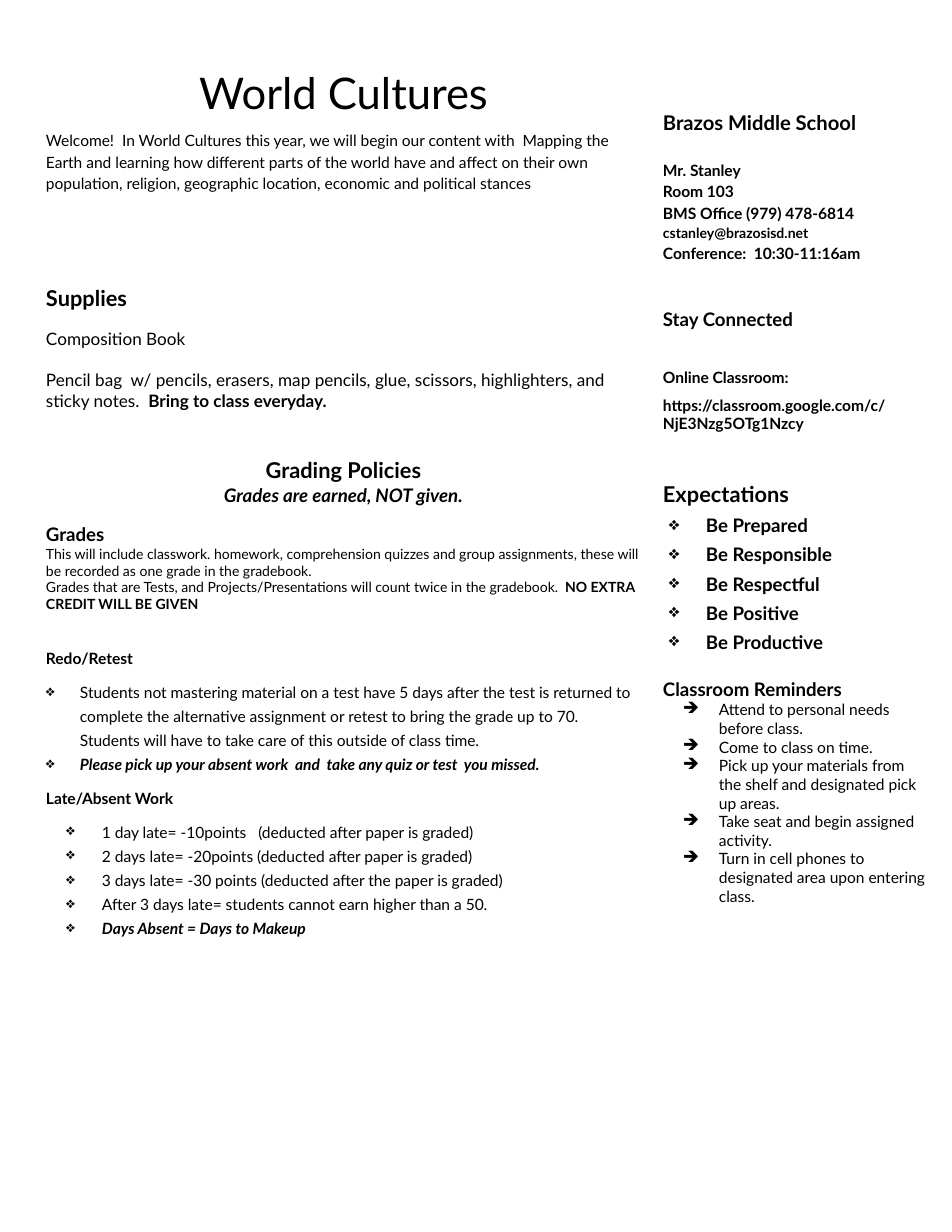
import pptx
import pptx.dml.color
import pptx.enum.text
import pptx.util
import lxml.etree

SCALE = 914400 / 112
THEME = {
    "font": "Lato",
    "ink": pptx.dml.color.RGBColor(0, 0, 0),
    "paper": pptx.dml.color.RGBColor(255, 255, 255),
    "display": 28, "section": 14, "school": 13, "heading": 12,
    "supply": 11, "body": 10, "small": 9,
}
CENTER = pptx.enum.text.PP_ALIGN.CENTER
BOLD = {"bold": True}
BOLD_ITALIC = {"bold": True, "italic": True}
# Bullet character, left indent and hanging indent in px
REDO_LIST = ("❖", 34, -36)
LATE_LIST = ("❖", 56, -36)
EXPECTATION_LIST = ("❖", 43, -37)
REMINDER_LIST = ("➔", 56, -36)


def px(length):
    return pptx.util.Emu(round(length * SCALE))


def fill_cell(cell, top, paragraphs):
    """Write (runs, size, paragraph format, bullet) rows; runs are (text, font format) pairs."""
    cell.margin_left = cell.margin_right = cell.margin_bottom = px(11)
    cell.margin_top = px(top)
    frame = cell.text_frame
    for index, (runs, size, layout, bullet) in enumerate(paragraphs):
        paragraph = frame.add_paragraph() if index else frame.paragraphs[0]
        for name, value in layout.items():
            if name == "first_line":
                paragraph._p.get_or_add_pPr().set("indent", str(px(value)))
            else:
                setattr(paragraph, name, value)
        if bullet:
            character, left, hanging = bullet
            properties = paragraph._p.get_or_add_pPr()
            properties.set("marL", str(px(left)))
            properties.set("indent", str(px(hanging)))
            namespace = "{%s}" % properties.nsmap["a"]
            color = lxml.etree.SubElement(properties, namespace + "buClr")
            lxml.etree.SubElement(color, namespace + "srgbClr", val=str(THEME["ink"]))
            lxml.etree.SubElement(properties, namespace + "buChar", char=character)
        for text, emphasis in runs:
            run = paragraph.add_run()
            run.text = text
            run.font.color.rgb = THEME["ink"]
            font = {"name": THEME["font"], "size": pptx.util.Pt(THEME[size]), **emphasis}
            for name, value in font.items():
                setattr(run.font, name, value)


presentation = pptx.Presentation()
presentation.slide_width = px(952)
presentation.slide_height = px(1232)
slide = presentation.slides.add_slide(presentation.slide_layouts[6])

table = slide.shapes.add_table(3, 2, px(35), px(12), px(901), px(1220)).table
table.first_row = table.horz_banding = False
for column, width in zip(table.columns, (617, 284)):
    column.width = px(width)
for row, height in zip(table.rows, (259, 783, 178)):
    row.height = px(height)
for cell in table.iter_cells():
    cell.fill.solid()
    cell.fill.fore_color.rgb = THEME["paper"]

before = {points: {"space_before": pptx.util.Pt(points)} for points in (6, 11, 13, 15, 16, 20, 24, 26, 30)}
airy = {"line_spacing": 1.15}
loose = {"line_spacing": 1.3}

fill_cell(table.cell(0, 0), 55, [
    ([("World Cultures", {})], "display", {"alignment": CENTER}, None),
    ([("Welcome!  In World Cultures this year, we will begin our content with  Mapping the Earth "
       "and learning how different parts of the world have and affect on their own population, "
       "religion, geographic location, economic and political stances", {})],
     "body", {**airy, **before[6]}, None),
])

contact = [
    ("Brazos Middle School", "school", {}),
    ("Mr. Stanley", "body", before[15]),
    ("Room 103", "body", {}),
    ("BMS Office (979) 478-6814", "body", {}),
    ("cstanley@brazosisd.net", "small", {}),
    ("Conference:  10:30-11:16am", "body", {}),
]
fill_cell(table.cell(0, 1), 95, [
    ([(text, BOLD)], size, {**airy, **gap}, None) for text, size, gap in contact
])

policies = [
    ([("Supplies", BOLD)], "section", {}, None),
    ([("Composition Book", {})], "supply", before[11], None),
    ([("Pencil bag  w/ pencils, erasers, map pencils, glue, scissors, highlighters, and sticky notes.  ", {}),
      ("Bring to class everyday.", BOLD)], "supply", before[13], None),
    ([("Grading Policies", BOLD)], "section",
     {"alignment": CENTER, "first_line": -62, **before[30]}, None),
    ([("Grades are earned, NOT given.", BOLD_ITALIC)], "heading", {"alignment": CENTER}, None),
    ([("Grades", BOLD)], "heading", before[11], None),
    ([("This will include classwork. homework, comprehension quizzes and group assignments, "
       "these will be recorded as one grade in the gradebook.", {})], "small", {}, None),
    ([("Grades that are Tests, and Projects/Presentations will count twice in the gradebook.  ", {}),
      ("NO EXTRA CREDIT WILL BE GIVEN", BOLD)], "small", {}, None),
]
late_work = [
    ("Redo/Retest", BOLD, before[20], None),
    ("Students not mastering material on a test have 5 days after the test is returned to complete "
     "the alternative assignment or retest to bring the grade up to 70. Students will have to take "
     "care of this outside of class time.", {}, before[6], REDO_LIST),
    ("Please pick up your absent work  and  take any quiz or test  you missed.", BOLD_ITALIC, {}, REDO_LIST),
    ("Late/Absent Work", BOLD, before[6], None),
    ("1 day late= -10points   (deducted after paper is graded)", {}, before[6], LATE_LIST),
    ("2 days late= -20points (deducted after paper is graded)", {}, {}, LATE_LIST),
    ("3 days late= -30 points (deducted after the paper is graded)", {}, {}, LATE_LIST),
    ("After 3 days late= students cannot earn higher than a 50.", {}, {}, LATE_LIST),
    ("Days Absent = Days to Makeup", BOLD_ITALIC, {}, LATE_LIST),
]
fill_cell(table.cell(1, 0), 11, policies + [
    ([(text, emphasis)], "body", {**loose, **gap}, bullet) for text, emphasis, gap, bullet in late_work
])

expectations = ["Be Prepared", "Be Responsible", "Be Respectful", "Be Positive", "Be Productive"]
reminders = [
    "Attend to personal needs before class.",
    "Come to class on time.",
    "Pick up your materials from the shelf and designated pick up areas.",
    "Take seat and begin assigned activity.",
    "Turn in cell phones to designated area upon entering class.",
]
fill_cell(table.cell(1, 1), 34, [
    ([("Stay Connected", BOLD)], "heading", {}, None),
    ([("Online Classroom:", BOLD)], "body", before[24], None),
    ([("https://classroom.google.com/c/NjE3Nzg5OTg1Nzcy", BOLD)], "body", before[6], None),
    ([("Expectations", BOLD)], "section", {**loose, **before[26]}, None),
    *[([(text, BOLD)], "heading", loose, EXPECTATION_LIST) for text in expectations],
    ([("Classroom Reminders", BOLD)], "heading", before[16], None),
    *[([(text, {})], "body", {}, REMINDER_LIST) for text in reminders],
])

presentation.save("out.pptx")
